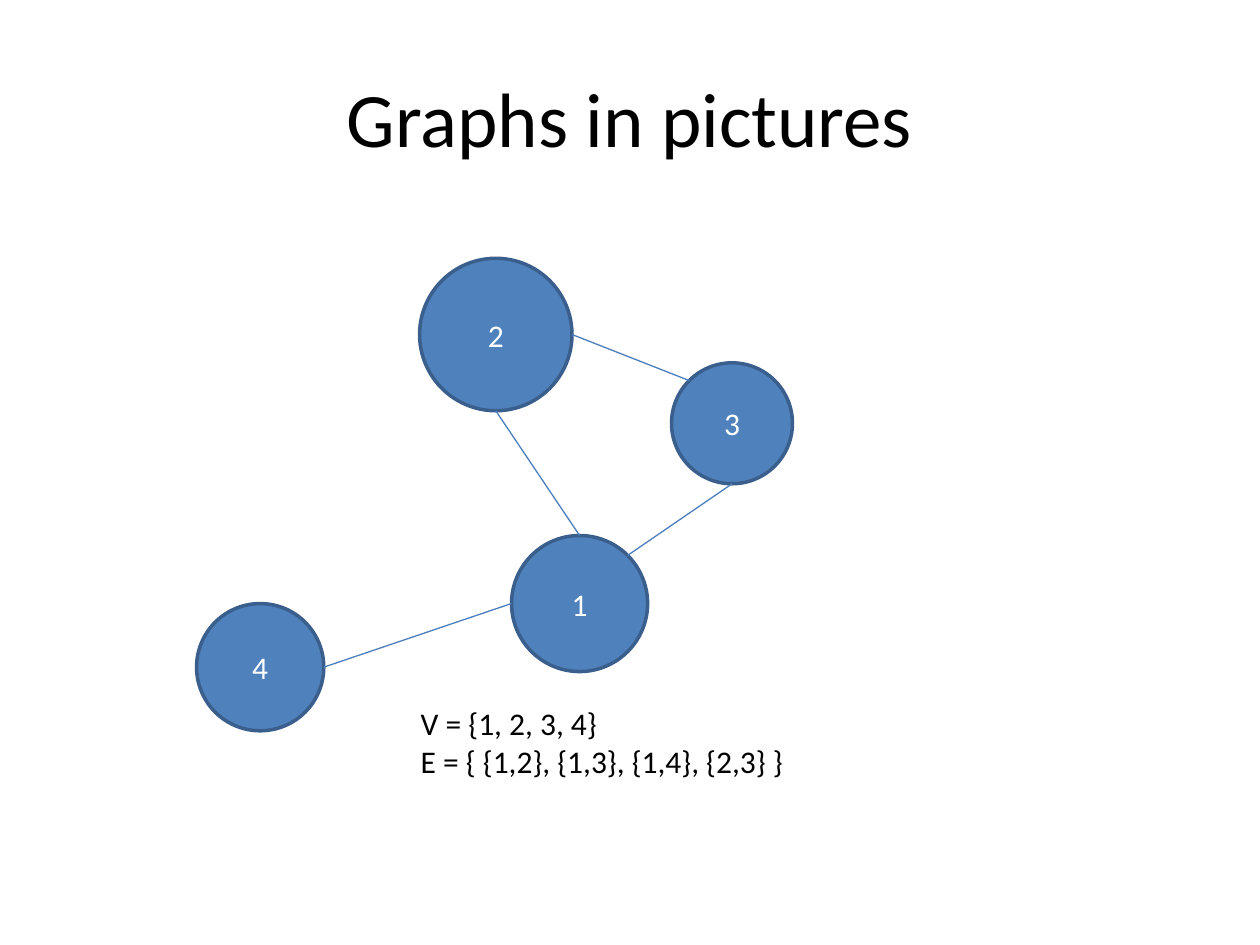
from dataclasses import dataclass
from enum import IntEnum
from math import cos, radians, sin

from lxml.etree import SubElement
from pptx import Presentation
from pptx.dml.color import RGBColor
from pptx.enum.shapes import MSO_CONNECTOR, MSO_SHAPE
from pptx.enum.text import MSO_ANCHOR, MSO_AUTO_SIZE, PP_ALIGN
from pptx.oxml.ns import qn
from pptx.shapes.autoshape import Shape
from pptx.slide import Slide
from pptx.util import Inches, Pt


@dataclass(frozen=True)
class Theme:
    font: str = "Calibri"
    title_size: int = 44
    body_size: int = 18
    ink: str = "000000"
    node_text: str = "FFFFFF"
    node_fill: str = "4F81BD"
    node_line: str = "3A5F8C"
    edge_line: str = "4B7EBC"
    node_width: float = 2
    edge_width: float = 0.75


class Site(IntEnum):
    TOP = 0
    TOP_LEFT = 1
    LEFT = 2
    BOTTOM = 4
    RIGHT = 6
    TOP_RIGHT = 7


@dataclass(frozen=True)
class Node:
    label: str
    column: float
    row: float
    span: float

    def site_position(self, site: Site) -> tuple[int, int]:
        angle = radians(90 + 45 * site)
        radius = self.span / 2
        return (grid(self.column + radius * (1 + cos(angle))),
                grid(self.row + radius * (1 - sin(angle))))


@dataclass(frozen=True)
class Edge:
    start: str
    start_site: Site
    end: str
    end_site: Site


THEME = Theme()
COLUMNS, ROWS = 100, 75
CELL = Inches(0.1)
NODES = [
    Node("2", 33.3, 20.5, 12.1),
    Node("4", 15.6, 47.9, 10.1),
    Node("3", 53.3, 28.8, 9.6),
    Node("1", 40.6, 42.5, 10.8),
]
EDGES = [
    Edge("2", Site.RIGHT, "3", Site.TOP_LEFT),
    Edge("2", Site.BOTTOM, "1", Site.TOP),
    Edge("1", Site.TOP_RIGHT, "3", Site.BOTTOM),
    Edge("4", Site.RIGHT, "1", Site.LEFT),
]


def grid(cells: float) -> int:
    return round(cells * CELL)


def write(shape: Shape, text: str, size: int, color: str,
          align: PP_ALIGN, anchor: MSO_ANCHOR) -> None:
    frame = shape.text_frame
    frame.text = text
    frame.vertical_anchor = anchor
    for para in frame.paragraphs:
        para.alignment = align
        for span in para.runs:
            span.font.name = THEME.font
            span.font.size = Pt(size)
            span.font.color.rgb = RGBColor.from_string(color)


def draw_text(page: Slide, text: str, column: float, row: float, columns: float,
              rows: float, size: int, align: PP_ALIGN, anchor: MSO_ANCHOR) -> Shape:
    box = page.shapes.add_textbox(grid(column), grid(row), grid(columns), grid(rows))
    write(box, text, size, THEME.ink, align, anchor)
    box.text_frame.word_wrap = True
    return box


def draw_node(page: Slide, node: Node) -> Shape:
    circle = page.shapes.add_shape(MSO_SHAPE.OVAL, grid(node.column), grid(node.row),
                                   grid(node.span), grid(node.span))
    circle.shadow.inherit = False
    circle.fill.solid()
    circle.fill.fore_color.rgb = RGBColor.from_string(THEME.node_fill)
    circle.line.color.rgb = RGBColor.from_string(THEME.node_line)
    circle.line.width = Pt(THEME.node_width)
    write(circle, node.label, THEME.body_size, THEME.node_text,
          PP_ALIGN.CENTER, MSO_ANCHOR.MIDDLE)
    return circle


def draw_edge(page: Slide, edge: Edge, nodes: dict[str, Node],
              circles: dict[str, Shape]) -> None:
    line = page.shapes.add_connector(
        MSO_CONNECTOR.STRAIGHT,
        *nodes[edge.start].site_position(edge.start_site),
        *nodes[edge.end].site_position(edge.end_site))
    line.line.color.rgb = RGBColor.from_string(THEME.edge_line)
    line.line.width = Pt(THEME.edge_width)
    SubElement(line.element.spPr, qn("a:effectLst"))
    joints = line.element.find(f".//{qn('p:cNvCxnSpPr')}")
    for tag, label, site in (("a:stCxn", edge.start, edge.start_site),
                             ("a:endCxn", edge.end, edge.end_site)):
        SubElement(joints, qn(tag), id=str(circles[label].shape_id), idx=str(int(site)))


def main() -> None:
    deck = Presentation()
    deck.slide_width, deck.slide_height = COLUMNS * CELL, ROWS * CELL
    page = deck.slides.add_slide(deck.slide_layouts[6])
    draw_text(page, "Graphs in pictures", 5, 3, 90, 12.5, THEME.title_size,
              PP_ALIGN.CENTER, MSO_ANCHOR.MIDDLE)
    nodes = {node.label: node for node in NODES}
    circles = {node.label: draw_node(page, node) for node in NODES}
    for edge in EDGES:
        draw_edge(page, edge, nodes, circles)
    sets = draw_text(page, "V = {1, 2, 3, 4}\nE = { {1,2}, {1,3}, {1,4}, {2,3} }",
                     32.4, 55.4, 31.1, 7.1, THEME.body_size,
                     PP_ALIGN.LEFT, MSO_ANCHOR.TOP)
    sets.text_frame.word_wrap = False
    sets.text_frame.auto_size = MSO_AUTO_SIZE.SHAPE_TO_FIT_TEXT
    deck.save("out.pptx")


if __name__ == "__main__":
    main()
